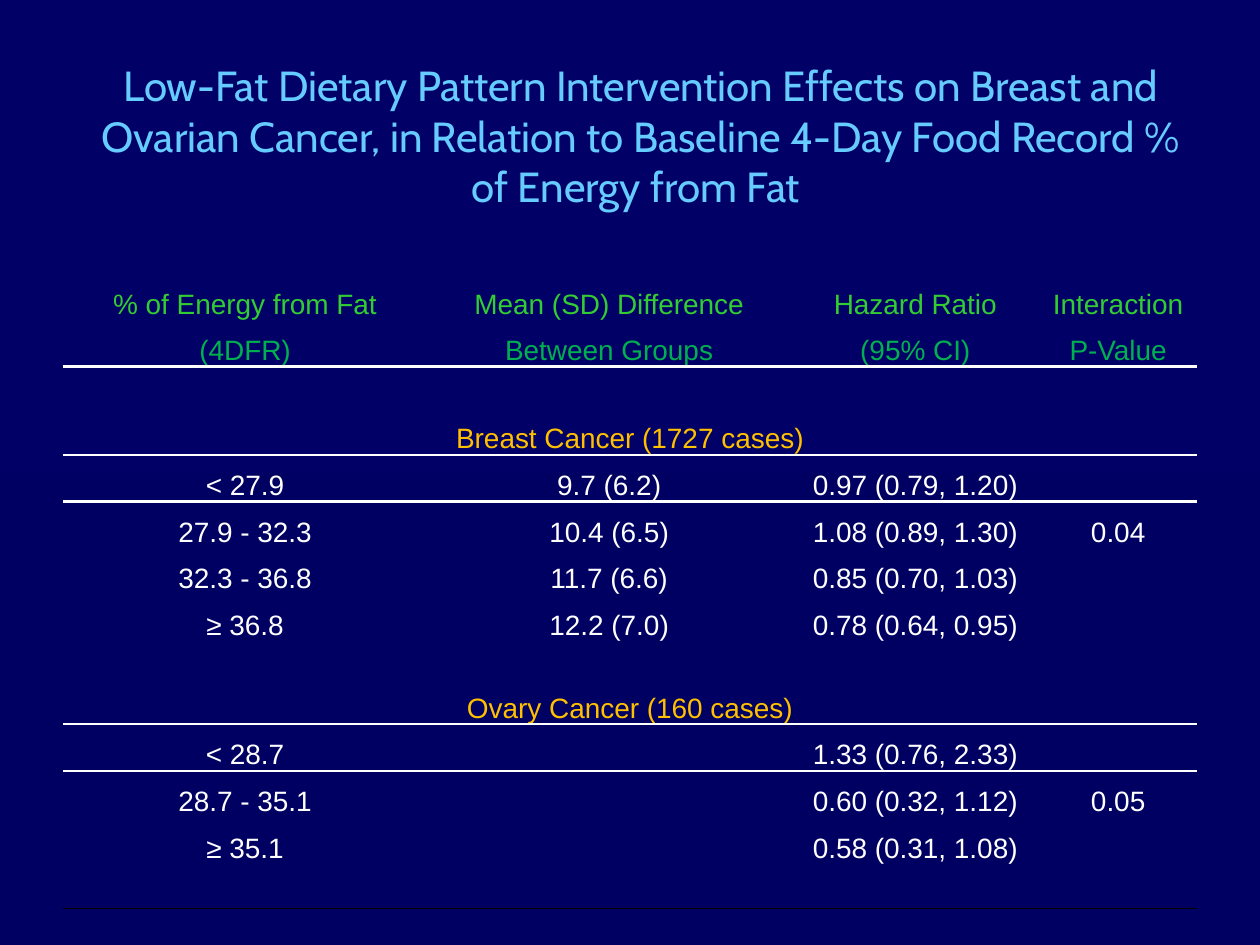
from lxml.etree import SubElement
from pptx import Presentation
from pptx.dml.color import RGBColor
from pptx.enum.text import MSO_ANCHOR as Anchor, MSO_AUTO_SIZE as AutoSize, PP_ALIGN as Align
from pptx.oxml.ns import qn
from pptx.util import Inches, Pt

COLORS = {
    "top": "000066", "bottom": "000062", "title": "66CCFF", "header": "33CC33",
    "subheader": "00B050", "section": "FFC000", "body": "FFFFFF", "end": "000000",
}
NO_STYLE = "{2D5ABB26-0587-4C30-8999-92F81FD0307C}"
TITLE = ("Low-Fat Dietary Pattern Intervention Effects on Breast and Ovarian Cancer, "
         "in Relation to Baseline 4-Day Food Record % of Energy from Fat ")
ROWS = [
    ("header", 0.37, ["% of Energy from Fat", "Mean (SD) Difference", "Hazard Ratio", "Interaction"]),
    ("subheader", 0.37, ["(4DFR)", "Between Groups", "(95% CI)", "P-Value"]),
    ("section", 0.7, ["Breast Cancer (1727 cases)", "", "", ""]),
    ("body", 0.37, ["< 27.9", "9.7 (6.2)", "0.97 (0.79, 1.20)", ""]),
    ("body", 0.37, ["27.9 - 32.3", "10.4 (6.5)", "1.08 (0.89, 1.30)", "0.04"]),
    ("body", 0.37, ["32.3 - 36.8", "11.7 (6.6)", "0.85 (0.70, 1.03)", ""]),
    ("body", 0.37, ["≥ 36.8", "12.2 (7.0)", "0.78 (0.64, 0.95)", ""]),
    ("section", 0.66, ["Ovary Cancer (160 cases)", "", "", ""]),
    ("body", 0.37, ["< 28.7", "", "1.33 (0.76, 2.33)", ""]),
    ("body", 0.37, ["28.7 - 35.1", "", "0.60 (0.32, 1.12)", "0.05"]),
    ("body", 0.37, ["≥ 35.1", "", "0.58 (0.31, 1.08)", ""]),
    ("end", 0.35, ["", "", "", ""]),
]
COLUMN_WIDTHS = [2.89, 2.89, 1.97, 1.25]
RULES = {"subheader": ("body", 1.5), "section": ("body", 1.5), "end": ("end", 0.5)}


def color(name):
    return RGBColor.from_string(COLORS[name])


def format_text(paragraph, font_name, size, color_name):
    paragraph.alignment = Align.CENTER
    paragraph.font.name = font_name
    paragraph.font.size = Pt(size)
    paragraph.font.color.rgb = color(color_name)


def add_border(cell, side, rule):
    color_name, width = rule
    line = SubElement(cell._tc.get_or_add_tcPr(), qn(f"a:ln{side}"), w=str(Pt(width)))
    fill = SubElement(line, qn("a:solidFill"))
    SubElement(fill, qn("a:srgbClr"), val=COLORS[color_name])


def add_results(slide):
    height = sum(row_height for _, row_height, _ in ROWS)
    frame = slide.shapes.add_table(
        len(ROWS), len(COLUMN_WIDTHS), Inches(0.5), Inches(2.17),
        Inches(sum(COLUMN_WIDTHS)), Inches(height))
    results = frame.table
    results.first_row = results.horz_banding = False
    results._tbl.tblPr.find(qn("a:tableStyleId")).text = NO_STYLE
    for column, width in zip(results.columns, COLUMN_WIDTHS):
        column.width = Inches(width)

    rule_above = None
    for r, (kind, row_height, texts) in enumerate(ROWS):
        results.rows[r].height = Inches(row_height)
        rule_below = RULES.get(kind)
        for c, text in enumerate(texts):
            cell = results.cell(r, c)
            cell.margin_left = cell.margin_right = cell.margin_top = Inches(0.01)
            cell.margin_bottom = 0
            cell.vertical_anchor = Anchor.BOTTOM
            for side, rule in (("T", rule_above), ("B", rule_below)):
                if rule:
                    add_border(cell, side, rule)
            cell.fill.background()
            cell.text = text
            format_text(cell.text_frame.paragraphs[0], "Arial", 16, kind)
        if kind == "section":
            results.cell(r, 0).merge(results.cell(r, len(texts) - 1))
        rule_above = rule_below


def main():
    deck = Presentation()
    deck.slide_width, deck.slide_height = Inches(10), Inches(7.5)
    slide = deck.slides.add_slide(deck.slide_layouts[5])

    backdrop = slide.background.fill
    backdrop.gradient()
    backdrop.gradient_angle = 270
    for stop, name in zip(backdrop.gradient_stops, ("top", "bottom")):
        stop.color.rgb = color(name)

    add_results(slide)

    title = slide.shapes.title
    title.left, title.top = Inches(0.67), Inches(0.42)
    title.width, title.height = Inches(8.83), Inches(1.31)
    title.text_frame.text = TITLE
    title.text_frame.word_wrap = True
    title.text_frame.auto_size = AutoSize.NONE
    title.text_frame.vertical_anchor = Anchor.MIDDLE
    format_text(title.text_frame.paragraphs[0], "Cabin", 24, "title")

    deck.save("out.pptx")


if __name__ == "__main__":
    main()
